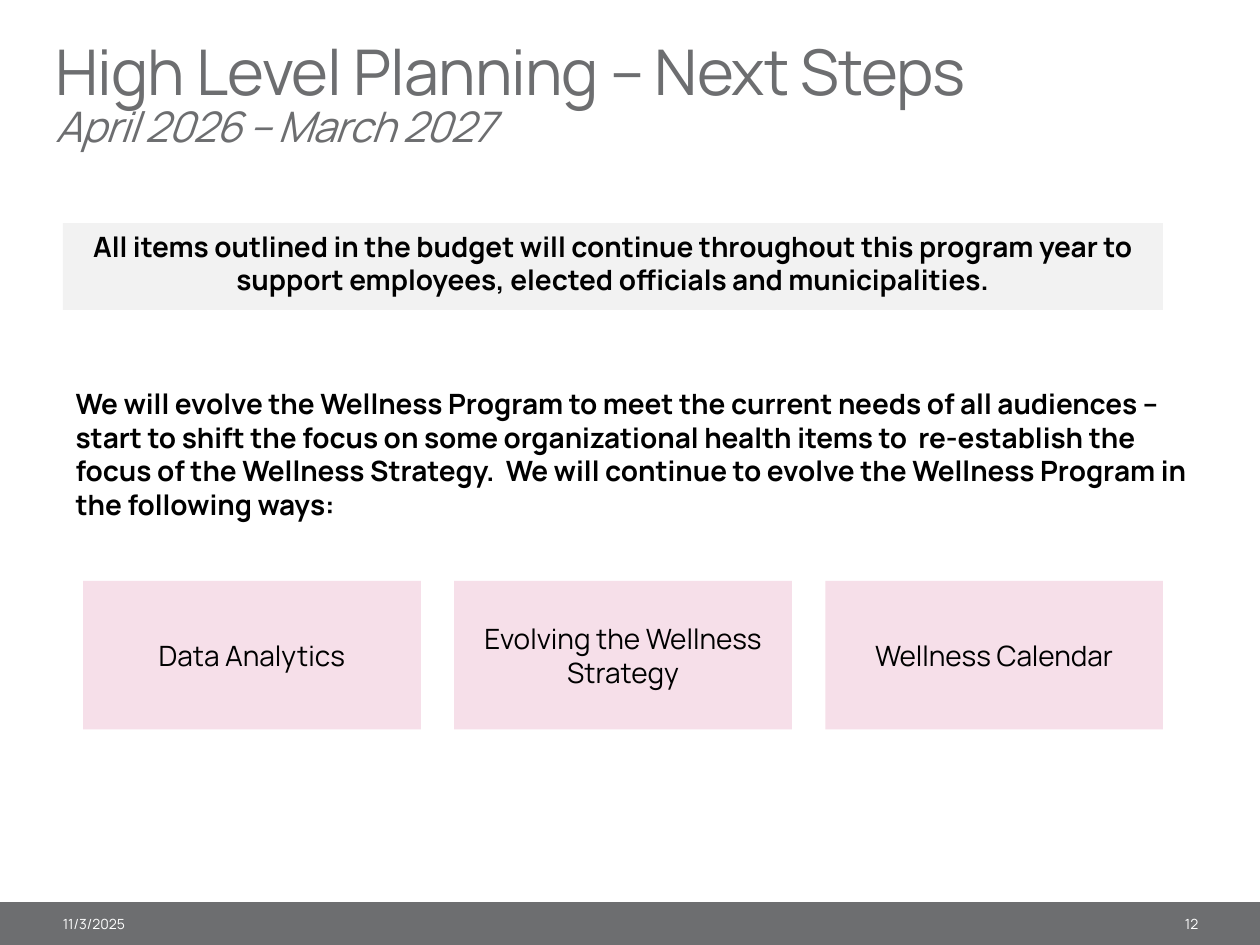
from typing import NamedTuple

from lxml.etree import SubElement
from pptx import Presentation
from pptx.dml.color import RGBColor
from pptx.enum.shapes import MSO_SHAPE as SHAPE
from pptx.enum.text import MSO_ANCHOR as ANCHOR, MSO_AUTO_SIZE as AUTO, PP_ALIGN as ALIGN
from pptx.oxml.ns import qn
from pptx.util import Inches, Pt

FONT = "Manrope"
GREY, PALE_GREY, PINK = "6D6E70", "F2F2F2", "F6DFE9"
BLACK, WHITE = "000000", "FFFFFF"


class Box(NamedTuple):
    left: float
    top: float
    width: float
    height: float


class Style(NamedTuple):
    size: float
    color: str = BLACK
    bold: bool = False
    italic: bool = False


def rgb(value: str) -> RGBColor:
    return RGBColor.from_string(value)


def place(sp, box: Box) -> None:
    sp.left, sp.top, sp.width, sp.height = map(Inches, box)


def setup(sp, anchor):
    tf = sp.text_frame
    tf.word_wrap = True
    tf.auto_size = AUTO.NONE
    tf.vertical_anchor = anchor
    return tf


def write(p, text: str, style: Style, align=ALIGN.LEFT):
    p.alignment = align
    p.space_before = Pt(0)
    r = p.add_run()
    r.text = text
    r.font.name = FONT
    r.font.size = Pt(style.size)
    r.font.bold = style.bold
    r.font.italic = style.italic
    r.font.color.rgb = rgb(style.color)
    return r


def add_panel(s, box: Box, fill: str, text: str = "", style: Style = Style(16),
              anchor=ANCHOR.MIDDLE) -> None:
    sp = s.shapes.add_shape(SHAPE.RECTANGLE, *map(Inches, box))
    sp.shadow.inherit = False
    sp.fill.solid()
    sp.fill.fore_color.rgb = rgb(fill)
    sp.line.fill.background()
    if text:
        write(setup(sp, anchor).paragraphs[0], text, style, ALIGN.CENTER)


def add_label(s, box: Box, text: str, align) -> None:
    sp = s.shapes.add_textbox(*map(Inches, box))
    write(setup(sp, ANCHOR.MIDDLE).paragraphs[0], text, Style(8, WHITE), align)


def fill_title(sp) -> None:
    place(sp, Box(0.34, 0.3, 9.66, 0.82))
    tf = setup(sp, ANCHOR.TOP)
    lines = [("High Level Planning – Next Steps", Style(36, GREY)),
             ("April 2026 – March 2027", Style(24, GREY, italic=True))]
    for i, (text, style) in enumerate(lines):
        p = tf.add_paragraph() if i else tf.paragraphs[0]
        p.line_spacing = 0.85
        r = write(p, text, style)
        r.font._element.set("spc", "-50")


def fill_body(sp) -> None:
    place(sp, Box(0.5, 3.02, 9.04, 2.34))
    p = setup(sp, ANCHOR.TOP).paragraphs[0]
    pPr = p._p.get_or_add_pPr()
    pPr.set("marL", "0")
    pPr.set("indent", "0")
    SubElement(pPr, qn("a:buNone"))
    write(p, "We will evolve the Wellness Program to meet the current needs of all "
             "audiences – start to shift the focus on some organizational health items to  "
             "re-establish the focus of the Wellness Strategy.  We will continue to evolve "
             "the Wellness Program in the following ways:", Style(16, bold=True))


def main() -> None:
    prs = Presentation()
    prs.slide_width, prs.slide_height = Inches(10), Inches(7.5)
    s = prs.slides.add_slide(prs.slide_layouts[1])

    fill_title(s.shapes.title)
    fill_body(s.placeholders[1])

    add_panel(s, Box(0, 7.16, 10, 0.34), GREY)
    add_label(s, Box(0.4, 7.18, 2.03, 0.31), "11/3/2025", ALIGN.LEFT)
    add_label(s, Box(8.53, 7.18, 1.08, 0.31), "12", ALIGN.RIGHT)

    add_panel(s, Box(0.5, 1.77, 8.73, 0.69), PALE_GREY,
              "All items outlined in the budget will continue throughout this program year "
              "to support employees, elected officials and municipalities.",
              Style(16, bold=True), ANCHOR.TOP)

    left, width, right = 0.66, 2.68, 9.23
    topics = ["Data Analytics", "Evolving the Wellness Strategy", "Wellness Calendar"]
    step = (right - left - width) / (len(topics) - 1)
    for i, topic in enumerate(topics):
        add_panel(s, Box(left + i * step, 4.61, width, 1.18), PINK, topic)

    prs.save("out.pptx")


if __name__ == "__main__":
    main()
